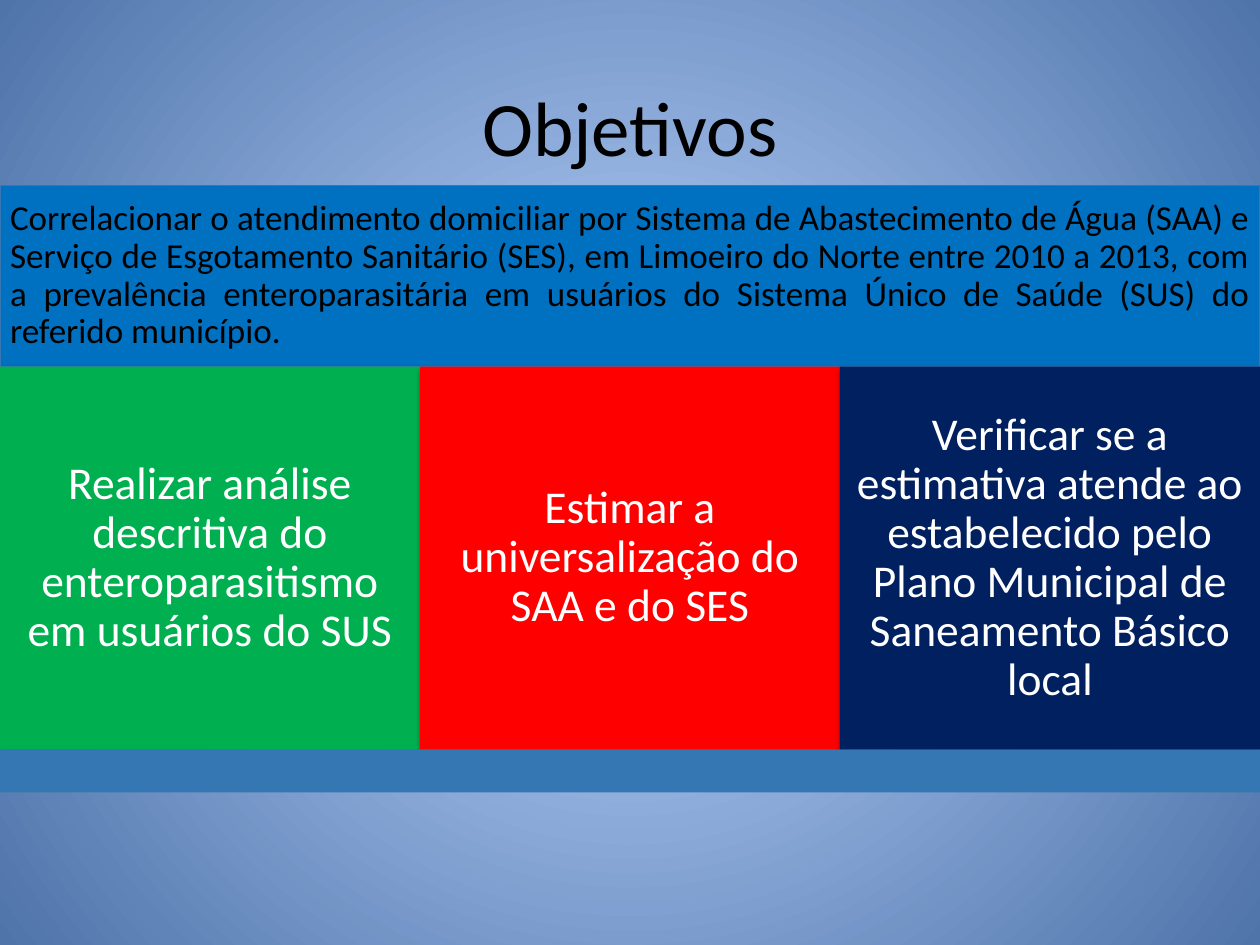
"""Build the study objectives slide: a general aim above three specific ones."""
from lxml.etree import SubElement
from pptx import Presentation
from pptx.dml.color import RGBColor
from pptx.enum.shapes import MSO_SHAPE
from pptx.enum.text import MSO_ANCHOR, PP_ALIGN
from pptx.oxml.ns import qn
from pptx.util import Inches, Pt

RECTANGLE = MSO_SHAPE.RECTANGLE
MIDDLE = MSO_ANCHOR.MIDDLE
CENTER, JUSTIFY = PP_ALIGN.CENTER, PP_ALIGN.JUSTIFY

BLACK = RGBColor(0x00, 0x00, 0x00)
WHITE = RGBColor(0xFF, 0xFF, 0xFF)
GLOW = RGBColor(0xBC, 0xD6, 0xFF)
EDGE = RGBColor(0x4F, 0x74, 0xAA)
BLUE = RGBColor(0x00, 0x70, 0xC0)
STEEL = RGBColor(0x34, 0x77, 0xB2)
GREEN = RGBColor(0x00, 0xB0, 0x50)
RED = RGBColor(0xFF, 0x00, 0x00)
NAVY = RGBColor(0x00, 0x20, 0x60)

GENERAL_AIM = (
    "Correlacionar o atendimento domiciliar por Sistema de Abastecimento de Água (SAA) e "
    "Serviço de Esgotamento Sanitário (SES), em Limoeiro do Norte entre 2010 a 2013, com a "
    "prevalência enteroparasitária em usuários do Sistema Único de Saúde (SUS) do referido município."
)
SPECIFIC_AIMS = [
    ("Realizar análise descritiva do enteroparasitismo em usuários do SUS", GREEN),
    ("Estimar a universalização do SAA e do SES", RED),
    ("Verificar se a estimativa atende ao estabelecido pelo Plano Municipal de "
     "Saneamento Básico local", NAVY),
]

prs = Presentation()
prs.slide_width, prs.slide_height = Inches(10), Inches(7.5)
slide = prs.slides.add_slide(prs.slide_layouts[6])
width = prs.slide_width
column = width / len(SPECIFIC_AIMS)
aim_top, cards_top, base_top, base_bottom = (Inches(y) for y in (1.47, 2.91, 5.95, 6.29))


def add_band(left, top, band_width, bottom, color):
    band = slide.shapes.add_shape(RECTANGLE, round(left), top, round(band_width), bottom - top)
    band.shadow.inherit = False
    band.fill.solid()
    band.fill.fore_color.rgb = color
    band.line.fill.background()
    return band


def write(holder, text, size, color, align, inset, spacing):
    frame = holder.text_frame
    frame.word_wrap = True
    frame.vertical_anchor = MIDDLE
    for side in ("left", "top", "right", "bottom"):
        setattr(frame, f"margin_{side}", Inches(inset))
    paragraph = frame.paragraphs[0]
    paragraph.text = text
    paragraph.alignment = align
    paragraph.line_spacing = spacing
    font = paragraph.font
    for name, value in {"name": "Calibri", "size": Pt(size)}.items():
        setattr(font, name, value)
    font.color.rgb = color


backdrop = slide.background.fill
backdrop.gradient()
for stop, color in zip(backdrop.gradient_stops, (GLOW, EDGE)):
    stop.color.rgb = color
gradient = slide.element.find(".//" + qn("a:gradFill"))
gradient.remove(gradient.find(qn("a:lin")))
circle = SubElement(gradient, qn("a:path"), {"path": "circle"})
SubElement(circle, qn("a:fillToRect"), dict.fromkeys("ltrb", "50000"))

title = slide.shapes.add_textbox(width * 5 // 100, Inches(0.37), width * 9 // 10, Inches(1.25))
write(title, "Objetivos", 44, BLACK, CENTER, 0.05, 1.0)

general = add_band(0, aim_top, width, cards_top, BLUE)
general.line.color.rgb = STEEL
general.line.width = Pt(0.75)
write(general, GENERAL_AIM, 20, BLACK, JUSTIFY, 0.08, 0.9)

for index, (aim, color) in enumerate(SPECIFIC_AIMS):
    card = add_band(index * column, cards_top, column, base_top, color)
    write(card, aim, 26, WHITE, CENTER, 0.11, 0.9)
    effects = card.element.spPr.find(qn("a:effectLst"))
    shadow = SubElement(effects, qn("a:outerShdw"), {
        "blurRad": str(Pt(3.1)), "dist": str(Pt(1.8)), "dir": "5400000", "rotWithShape": "0"})
    tint = SubElement(shadow, qn("a:srgbClr"), {"val": str(BLACK)})
    SubElement(tint, qn("a:alpha"), {"val": "35000"})

add_band(0, base_top, width, base_bottom, STEEL)

prs.save("out.pptx")
